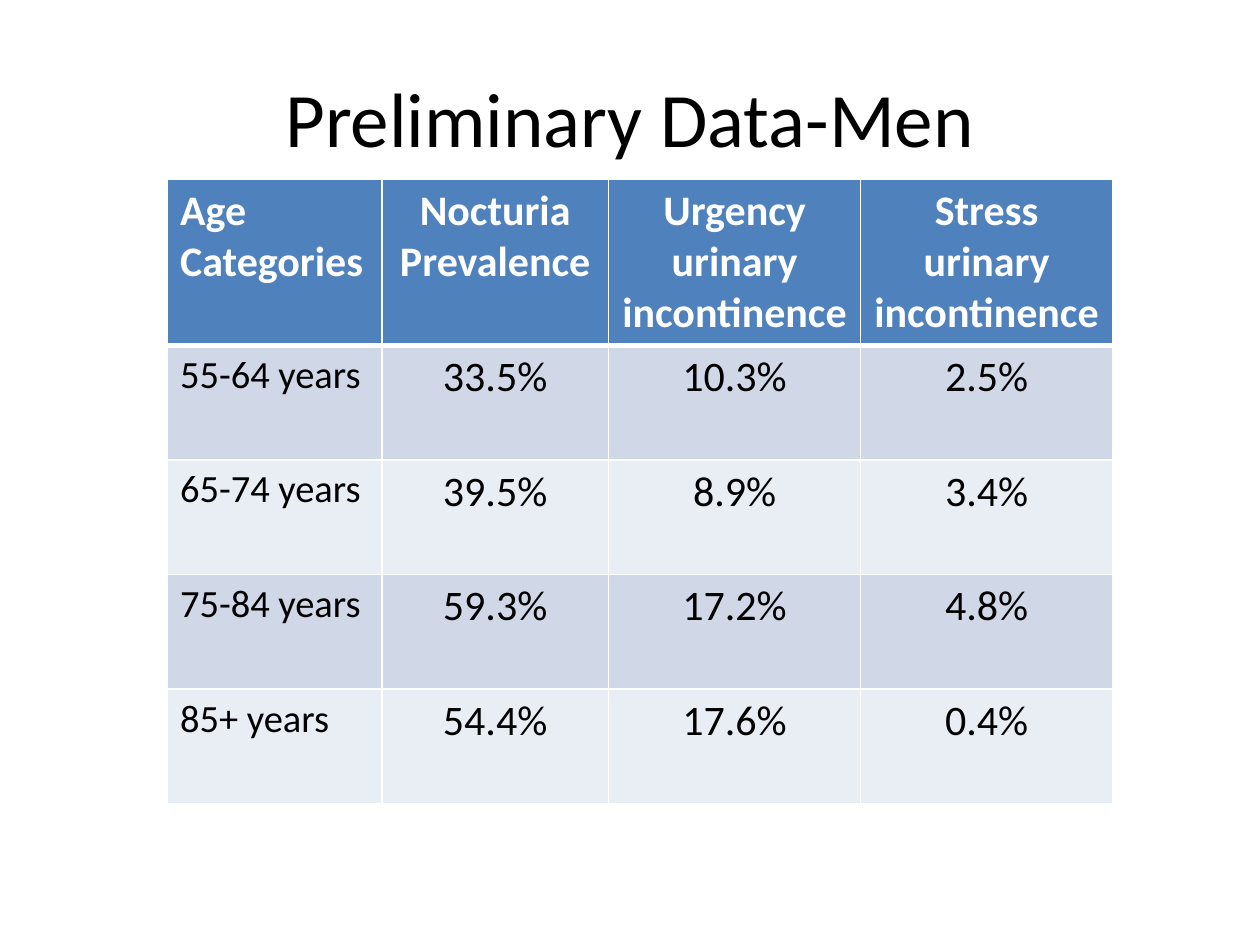
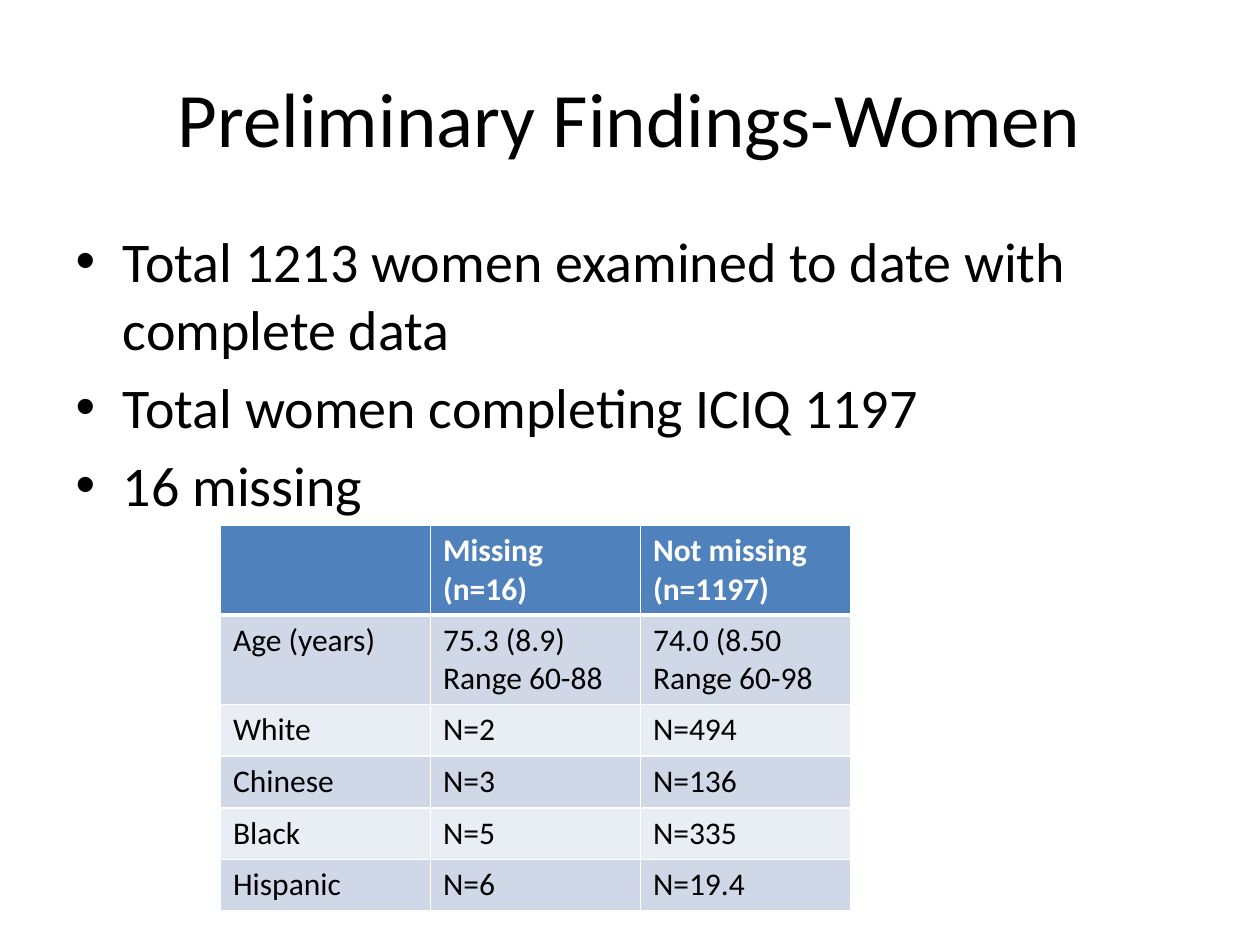
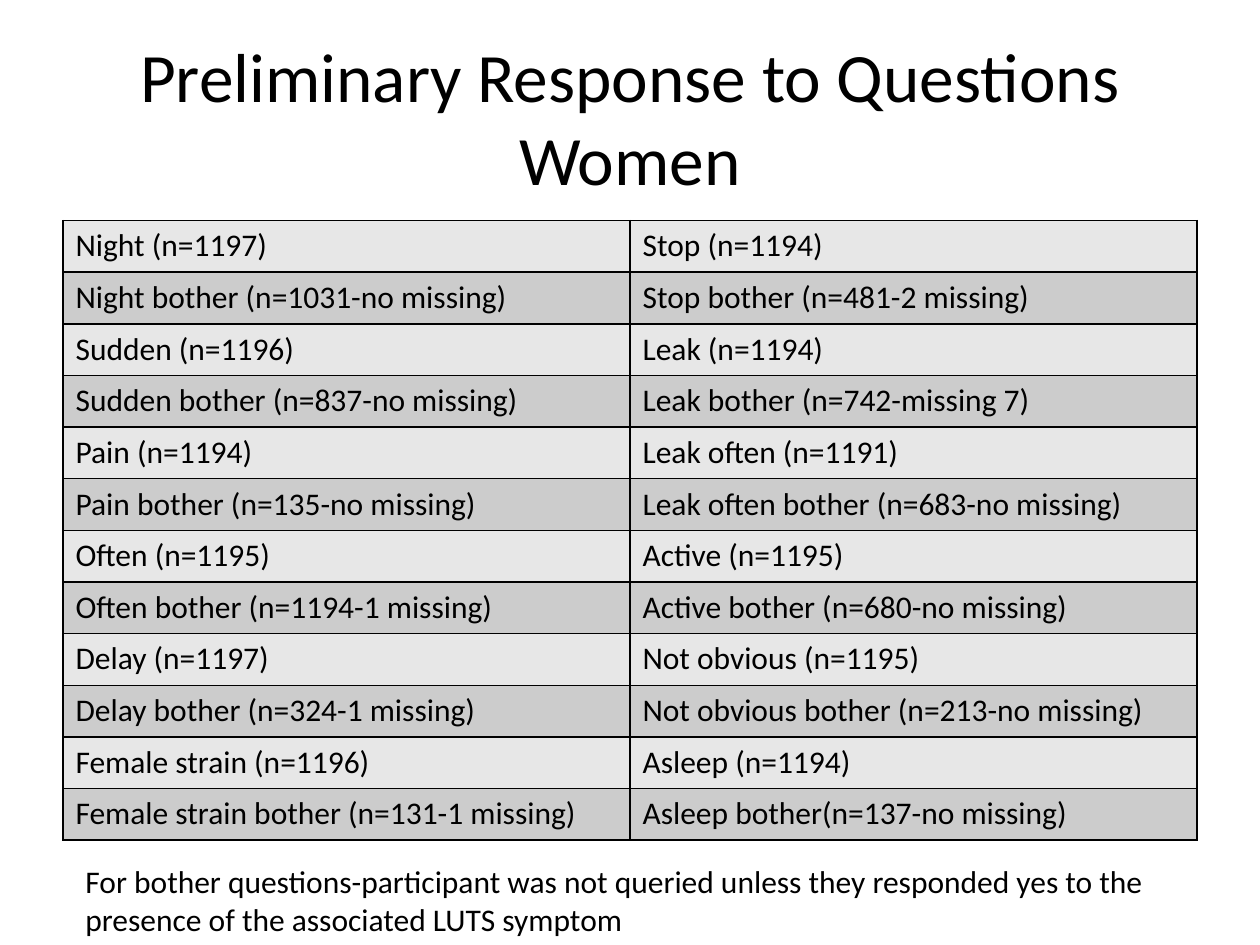
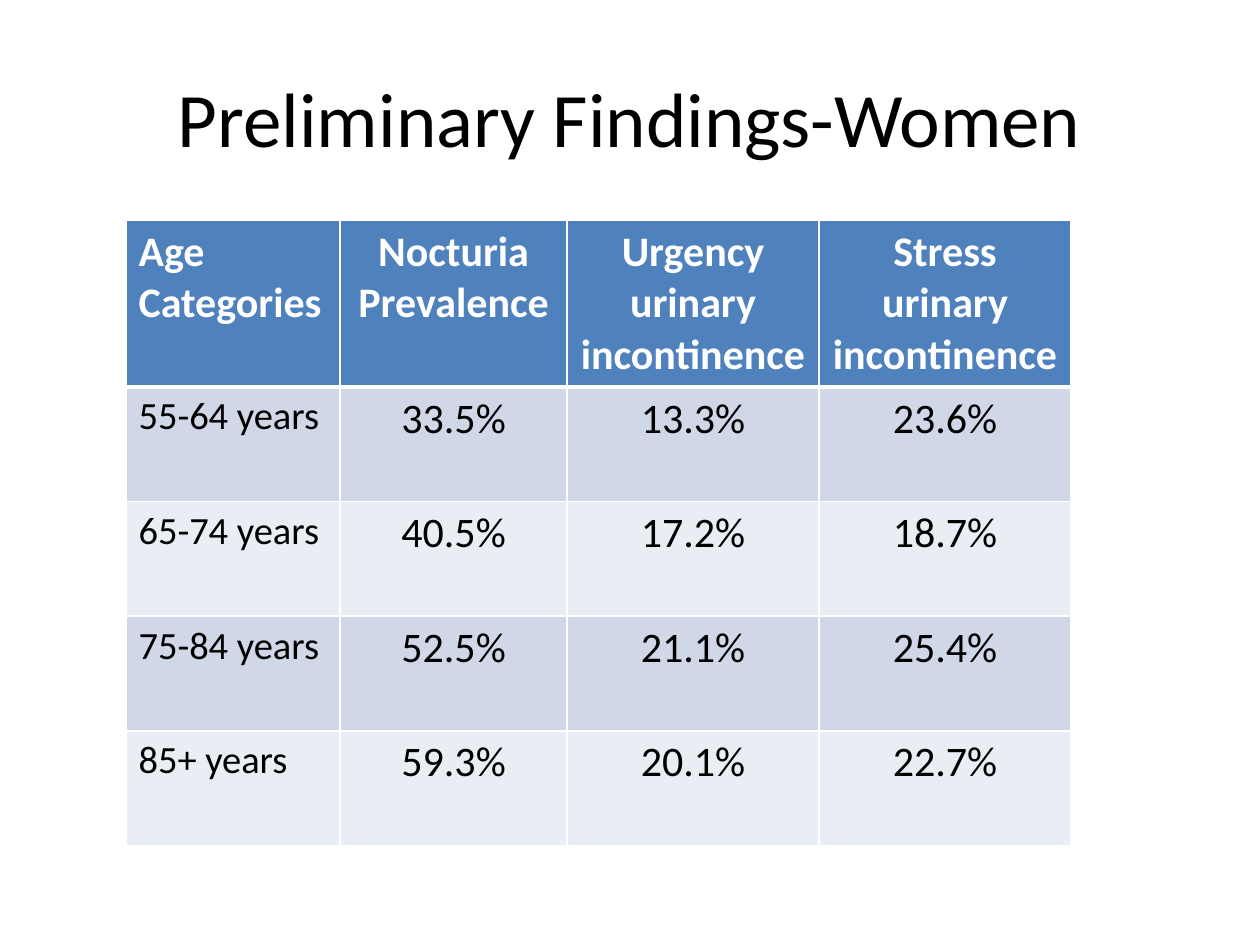
from lxml import etree
from pptx import Presentation
from pptx.dml.color import RGBColor
from pptx.enum import text
from pptx.oxml import ns
from pptx.util import Inches, Pt

FONT = "Calibri"
COLORS = {
    "text": "000000",
    "white": "FFFFFF",
    "header": "4F81BD",
    "blue band": "D0D8E8",
    "pale band": "E9EDF4",
    "light gray": "E7E7E7",
    "gray": "CCCCCC",
}
BLUE_BANDS = ("blue band", "pale band")
GRAY_BANDS = ("light gray", "gray")
CENTER = text.PP_ALIGN.CENTER
LEFT = text.PP_ALIGN.LEFT

# Slide contents
AGE_HEADER = ["Age Categories", "Nocturia Prevalence",
              "Urgency urinary incontinence", "Stress urinary incontinence"]
MEN = [
    ["55-64 years", "33.5%", "10.3%", "2.5%"],
    ["65-74 years", "39.5%", "8.9%", "3.4%"],
    ["75-84 years", "59.3%", "17.2%", "4.8%"],
    ["85+ years", "54.4%", "17.6%", "0.4%"],
]
WOMEN = [
    ["55-64 years", "33.5%", "13.3%", "23.6%"],
    ["65-74 years", "40.5%", "17.2%", "18.7%"],
    ["75-84 years", "52.5%", "21.1%", "25.4%"],
    ["85+ years", "59.3%", "20.1%", "22.7%"],
]
BULLETS = [
    "Total 1213 women examined to date with complete data",
    "Total women completing ICIQ 1197",
    "16 missing",
]
MISSING = [
    ["", "Missing (n=16)", "Not missing (n=1197)"],
    ["Age (years)", "75.3 (8.9)\nRange 60-88", "74.0 (8.50\nRange 60-98"],
    ["White", "N=2", "N=494"],
    ["Chinese", "N=3", "N=136"],
    ["Black", "N=5", "N=335"],
    ["Hispanic", "N=6", "N=19.4"],
]
RESPONSES = [
    ["Night (n=1197)", "Stop (n=1194)"],
    ["Night bother (n=1031-no missing)", "Stop bother (n=481-2 missing)"],
    ["Sudden (n=1196)", "Leak (n=1194)"],
    ["Sudden bother (n=837-no missing)", "Leak bother (n=742-missing 7)"],
    ["Pain (n=1194)", "Leak often (n=1191)"],
    ["Pain bother (n=135-no missing)", "Leak often bother (n=683-no missing)"],
    ["Often (n=1195)", "Active (n=1195)"],
    ["Often bother (n=1194-1 missing)", "Active bother (n=680-no missing)"],
    ["Delay (n=1197)", "Not obvious (n=1195)"],
    ["Delay bother (n=324-1 missing)", "Not obvious bother (n=213-no missing)"],
    ["Female strain (n=1196)", "Asleep (n=1194)"],
    ["Female strain bother (n=131-1 missing)", "Asleep bother(n=137-no missing)"],
]
NOTE = ["For bother questions-participant was not queried unless they responded yes to the",
        "presence of the associated LUTS symptom"]


def add_run(paragraph, words, size, color="text", bold=False):
    run = paragraph.add_run()
    run.text = words
    run.font.name = FONT
    run.font.size = Pt(size)
    run.font.bold = bold
    run.font.color.rgb = RGBColor.from_string(COLORS[color])


def write_paragraphs(frame, lines, size, color="text", bold=False, align=LEFT):
    for index, line in enumerate(lines):
        paragraph = frame.paragraphs[0] if index == 0 else frame.add_paragraph()
        paragraph.alignment = align
        if line:
            add_run(paragraph, line, size, color, bold)


def place(shape, left, top, width, height):
    shape.left, shape.top = Inches(left), Inches(top)
    shape.width, shape.height = Inches(width), Inches(height)


def add_slide(presentation, title, size=44, layout=5):
    """Add a slide with a centred title; layout 5 is title only, 1 has a body."""
    slide = presentation.slides.add_slide(presentation.slide_layouts[layout])
    shape = slide.shapes.title
    place(shape, 0.5, 0.3, 9, 1.25)
    frame = shape.text_frame
    frame.auto_size = text.MSO_AUTO_SIZE.NONE
    frame.vertical_anchor = text.MSO_ANCHOR.MIDDLE
    paragraph = frame.paragraphs[0]
    paragraph.alignment = CENTER
    for index, line in enumerate(title.split("\n")):
        if index:
            paragraph.add_line_break()
        add_run(paragraph, line, size)
    return slide


def add_bullets(slide, bullets):
    body = slide.placeholders[1]
    place(body, 0.5, 1.75, 9, 4.95)
    body.text_frame.auto_size = text.MSO_AUTO_SIZE.NONE
    write_paragraphs(body.text_frame, bullets, 32)


def add_note(slide, lines):
    box = slide.shapes.add_textbox(Inches(0.58), Inches(6.79), Inches(8.76), Inches(0.71))
    box.text_frame.word_wrap = False
    box.text_frame.auto_size = text.MSO_AUTO_SIZE.SHAPE_TO_FIT_TEXT
    write_paragraphs(box.text_frame, lines, 18)


def set_borders(cell, color, top=1, bottom=1):
    properties = cell._tc.get_or_add_tcPr()
    sides = {"lnL": 1, "lnR": 1, "lnT": top, "lnB": bottom}
    for index, (side, points) in enumerate(sides.items()):
        line = etree.Element(ns.qn(f"a:{side}"), w=str(Pt(points)))
        fill = etree.SubElement(line, ns.qn("a:solidFill"))
        etree.SubElement(fill, ns.qn("a:srgbClr"), val=COLORS[color])
        properties.insert(index, line)


def add_table(slide, left, top, rows, widths, heights, bands, border,
              header=True, size=18, label_size=18, value_align=LEFT):
    """Add a banded table whose first column holds the row labels."""
    table = slide.shapes.add_table(
        len(rows), len(widths), Inches(left), Inches(top),
        Inches(sum(widths)), Inches(sum(heights))).table
    table.first_row = header
    for column, width in zip(table.columns, widths):
        column.width = Inches(width)
    for row, height in zip(table.rows, heights):
        row.height = Inches(height)
    for row_index, values in enumerate(rows):
        is_header = header and row_index == 0
        fill = "header" if is_header else bands[(row_index - header) % 2]
        for column_index, value in enumerate(values):
            cell = table.cell(row_index, column_index)
            cell.fill.solid()
            cell.fill.fore_color.rgb = RGBColor.from_string(COLORS[fill])
            set_borders(cell, border,
                        top=3 if header and row_index == 1 else 1,
                        bottom=3 if is_header else 1)
            is_label = column_index == 0
            write_paragraphs(
                cell.text_frame, value.split("\n"),
                label_size if is_label and not is_header else size,
                "white" if is_header else "text", is_header,
                LEFT if is_label else value_align)


def add_age_table(slide, left, top, rows):
    add_table(slide, left, top, [AGE_HEADER] + rows, [1.7, 1.8, 2, 2],
              [1.31] + [0.91] * len(rows), BLUE_BANDS, "white",
              size=24, label_size=22, value_align=CENTER)


def main():
    presentation = Presentation()
    presentation.slide_width, presentation.slide_height = Inches(10), Inches(7.5)

    # Men by age
    slide = add_slide(presentation, "Preliminary Data-Men")
    add_age_table(slide, 1.33, 1.42, MEN)

    # Women with and without missing data
    slide = add_slide(presentation, "Preliminary Findings-Women", layout=1)
    add_bullets(slide, BULLETS)
    add_table(slide, 1.75, 4.17, MISSING, [5 / 3] * 3, [0.7] * 2 + [0.41] * 4,
              BLUE_BANDS, "white")

    # Women's responses by question
    slide = add_slide(presentation, "Preliminary Response to Questions\nWomen", size=39.6)
    add_table(slide, 0.5, 1.75, RESPONSES, [4.5] * 2, [0.41] * len(RESPONSES),
              GRAY_BANDS, "text", header=False)
    add_note(slide, NOTE)

    # Women by age
    slide = add_slide(presentation, "Preliminary Findings-Women")
    add_age_table(slide, 1, 1.75, WOMEN)

    presentation.save("out.pptx")


if __name__ == "__main__":
    main()
